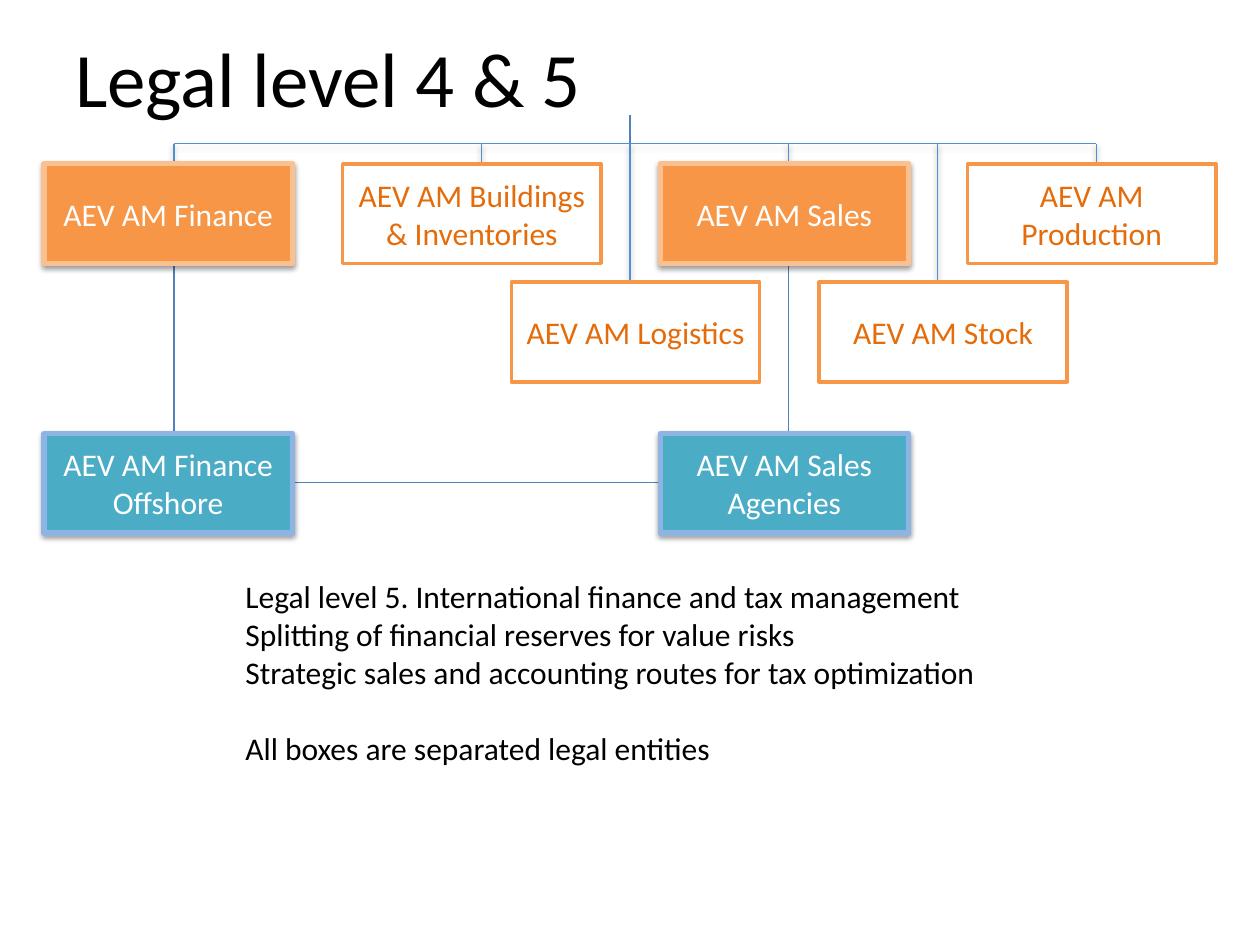
from dataclasses import dataclass

from lxml import etree
from pptx import Presentation
from pptx.dml.color import RGBColor
from pptx.enum.shapes import MSO_CONNECTOR, MSO_SHAPE
from pptx.enum.text import MSO_ANCHOR, PP_ALIGN
from pptx.oxml.ns import qn
from pptx.util import Inches, Pt

STRAIGHT = MSO_CONNECTOR.STRAIGHT
RECTANGLE = MSO_SHAPE.RECTANGLE
MIDDLE, TOP = MSO_ANCHOR.MIDDLE, MSO_ANCHOR.TOP
CENTER, LEFT = PP_ALIGN.CENTER, PP_ALIGN.LEFT

FONT = "Calibri"
COLORS = {
    "black": "000000",
    "white": "FFFFFF",
    "orange": "F79646",
    "pale orange": "FAC090",
    "dark orange": "E46C0A",
    "teal": "4BACC6",
    "pale blue": "8EB4E3",
    "link": "4F81BD",
    "branch": "558ED5",
}


@dataclass(frozen=True)
class BoxStyle:
    fill: str
    border: str
    text: str
    border_width: float
    shadow: bool


@dataclass(frozen=True)
class Entity:
    name: str
    left: float
    top: float
    style: BoxStyle
    width: float = 1.97


@dataclass(frozen=True)
class Link:
    start: tuple[float, float]
    end: tuple[float, float]
    color: str = "link"
    shadow: bool = False


MAIN = BoxStyle("orange", "pale orange", "white", 3, True)
SUPPORT = BoxStyle("white", "orange", "dark orange", 2, False)
LEVEL_5 = BoxStyle("teal", "pale blue", "white", 3, True)

BOX_HEIGHT = 0.79
UPPER_ROW, LOWER_ROW, LEVEL_5_ROW = 1.3, 2.24, 3.44
FINANCE_LEFT, SALES_LEFT = 0.35, 5.24
FINANCE_X, SALES_X, TRUNK_X, PRODUCTION_X = 1.38, 6.26, 5, 8.7
BUS_Y = 1.14
LEVEL_5_Y = 3.83

ENTITIES = [
    Entity("AEV AM Finance", FINANCE_LEFT, UPPER_ROW, MAIN),
    Entity("AEV AM Buildings & Inventories", 2.72, UPPER_ROW, SUPPORT, 2.05),
    Entity("AEV AM Production", 7.68, UPPER_ROW, SUPPORT),
    Entity("AEV AM Sales", SALES_LEFT, UPPER_ROW, MAIN),
    Entity("AEV AM Logistics", 4.06, LOWER_ROW, SUPPORT),
    Entity("AEV AM Stock", 6.5, LOWER_ROW, SUPPORT),
    Entity("AEV AM Finance\nOffshore", FINANCE_LEFT, LEVEL_5_ROW, LEVEL_5),
    Entity("AEV AM Sales\nAgencies", SALES_LEFT, LEVEL_5_ROW, LEVEL_5),
]

BRANCH_ENDS = {
    7.44: 2.56,
    3.82: 1.46,
    TRUNK_X: 2.56,
    SALES_X: 1.46,
    FINANCE_X: 1.29,
    PRODUCTION_X: 1.46,
}

LINKS = [
    Link((SALES_X, LEVEL_5_ROW), (SALES_X, 2.09)),
    Link((FINANCE_X, LEVEL_5_ROW), (FINANCE_X, 2.09)),
    Link((TRUNK_X, 1.22), (TRUNK_X, 0.91)),
    *(Link((x, end), (x, BUS_Y), "branch", True) for x, end in BRANCH_ENDS.items()),
    Link((FINANCE_X, BUS_Y), (PRODUCTION_X, BUS_Y), "branch", True),
    Link((2.32, LEVEL_5_Y), (SALES_LEFT, LEVEL_5_Y)),
]

NOTES = "\n".join([
    "Legal level 5. International finance and tax management",
    "Splitting of financial reserves for value risks",
    "Strategic sales and accounting routes for tax optimization",
    "All boxes are separated legal entities",
])


def color(name: str) -> RGBColor:
    return RGBColor.from_string(COLORS[name])


def set_effects(shape, shadow: bool) -> None:
    effects = etree.SubElement(shape.element.spPr, qn("a:effectLst"))
    if shadow:
        outer = etree.SubElement(
            effects, qn("a:outerShdw"), blurRad=str(Pt(3.1)), dist=str(Pt(1.6)),
            dir="5400000", rotWithShape="0")
        tint = etree.SubElement(outer, qn("a:srgbClr"), val=COLORS["black"])
        etree.SubElement(tint, qn("a:alpha"), val="38000")


def write_text(shape, text: str, size: float, text_color: str, align, anchor) -> None:
    frame = shape.text_frame
    frame.word_wrap = True
    frame.vertical_anchor = anchor
    frame.text = text
    for para in frame.paragraphs:
        para.alignment = align
        for span in para.runs:
            span.font.name = FONT
            span.font.size = Pt(size)
            span.font.color.rgb = color(text_color)


def draw_link(page, link: Link) -> None:
    points = (Inches(value) for value in (*link.start, *link.end))
    connector = page.shapes.add_connector(STRAIGHT, *points)
    connector.line.color.rgb = color(link.color)
    connector.line.width = Pt(0.75)
    set_effects(connector, link.shadow)


def draw_entity(page, entity: Entity) -> None:
    style = entity.style
    box = page.shapes.add_shape(
        RECTANGLE, Inches(entity.left), Inches(entity.top),
        Inches(entity.width), Inches(BOX_HEIGHT))
    box.fill.solid()
    box.fill.fore_color.rgb = color(style.fill)
    box.line.color.rgb = color(style.border)
    box.line.width = Pt(style.border_width)
    set_effects(box, style.shadow)
    write_text(box, entity.name, 18, style.text, CENTER, MIDDLE)


def main() -> None:
    deck = Presentation()
    deck.slide_width, deck.slide_height = Inches(10), Inches(7.5)
    page = deck.slides.add_slide(deck.slide_layouts[6])

    for link in LINKS:
        draw_link(page, link)
    title = page.shapes.add_textbox(Inches(0.5), Inches(-0.02), Inches(9), Inches(1.25))
    write_text(title, "Legal level 4 & 5", 44, "black", LEFT, MIDDLE)
    for entity in ENTITIES:
        draw_entity(page, entity)
    notes = page.shapes.add_textbox(Inches(1.85), Inches(4.53), Inches(6.06), Inches(1.62))
    write_text(notes, NOTES, 18, "black", LEFT, TOP)
    notes.text_frame.paragraphs[-1].space_before = Pt(22)

    deck.save("out.pptx")


if __name__ == "__main__":
    main()
